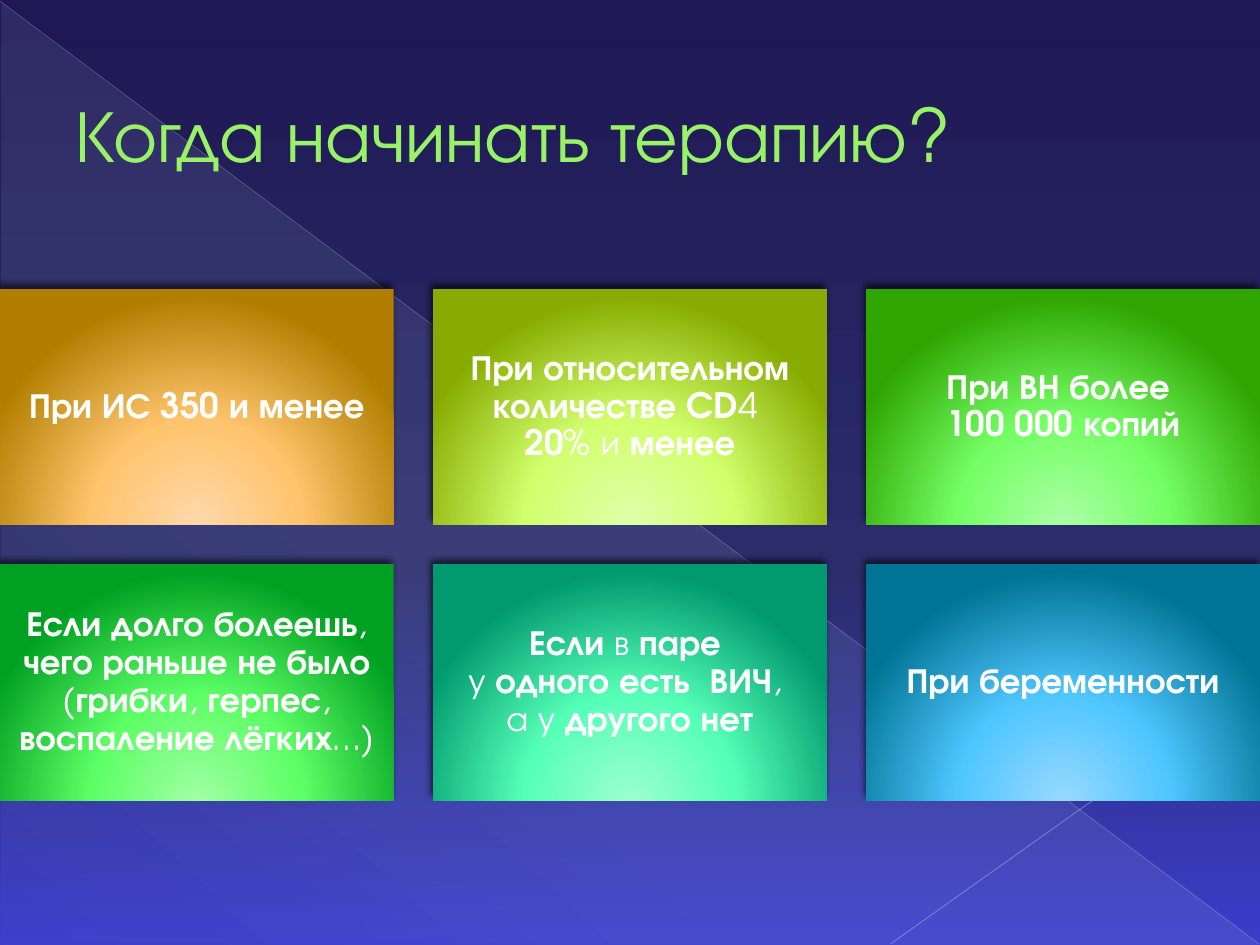
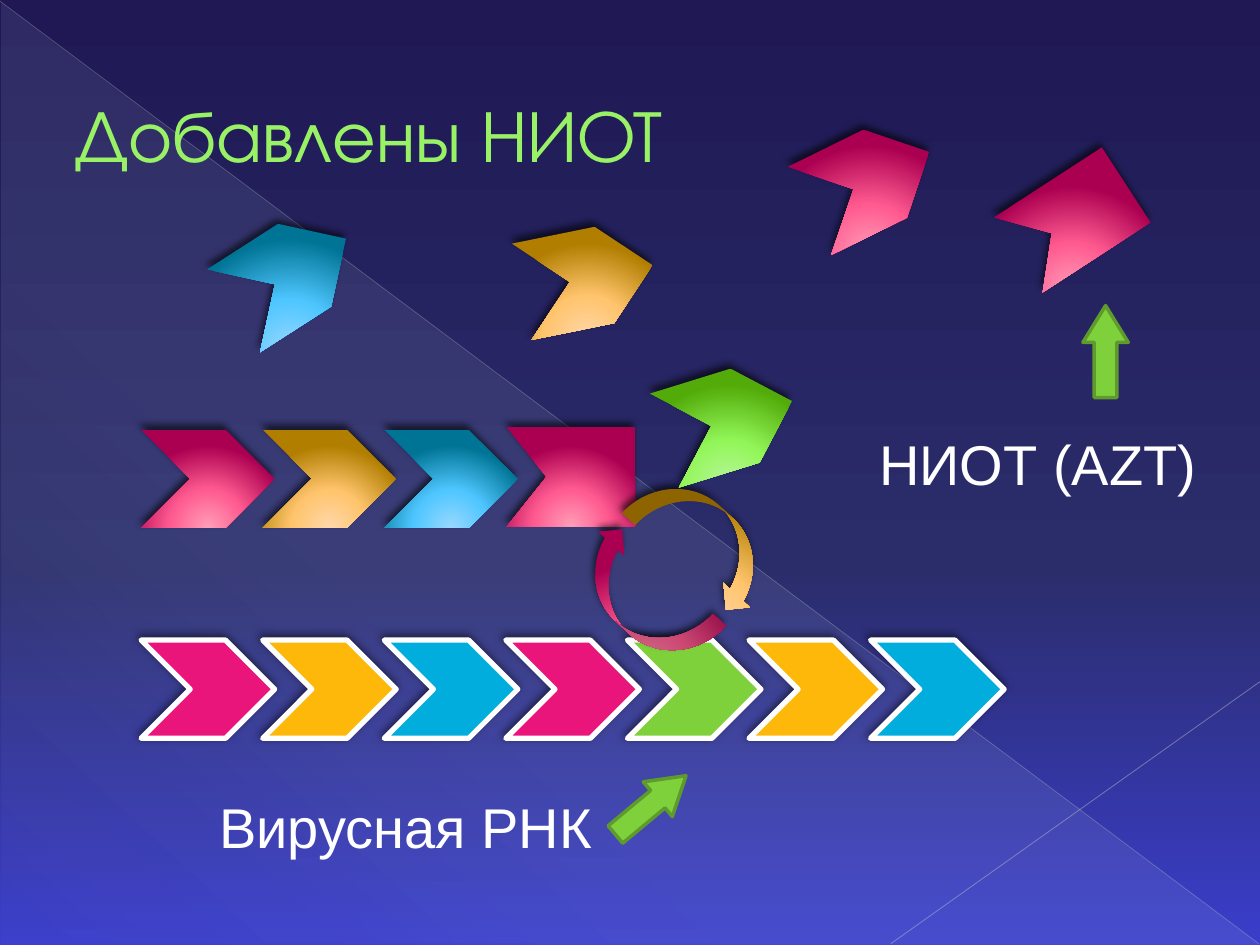
from dataclasses import dataclass
from typing import NamedTuple

from lxml.etree import SubElement
from pptx import Presentation
from pptx.dml.color import RGBColor
from pptx.enum.shapes import MSO_CONNECTOR, MSO_SHAPE
from pptx.enum.text import MSO_ANCHOR as Anchor, MSO_AUTO_SIZE as AutoSize, PP_ALIGN as Align
from pptx.oxml.ns import qn
from pptx.util import Inches, Pt


class Box(NamedTuple):
    left: float
    top: float
    width: float
    height: float

    def inches(self):
        return [Inches(length) for length in self]


@dataclass(frozen=True)
class Theme:
    display: str = "TeX Gyre Adventor"
    body: str = "Arial"
    title_size: int = 42
    label_size: int = 32
    card_size: int = 20
    title: str = "99F166"
    title_edge: str = "589129"
    text: str = "FFFFFF"
    pointer: str = "7FD13B"
    pointer_edge: str = "5E9B2C"
    night: tuple = ((0, "1F1854"), (60, "2B2D6B"), (100, "3A3DCA"))
    veil: tuple = ((0, "D6ECFF", 10), (70, "D6ECFF", 8), (100, "D6ECFF", 1))
    glow_shadow: tuple = (60, 4, 3)
    flat_shadow: tuple = (50, 5, 2)


THEME = Theme()
SLIDE = Box(0, 0, 10, 7.5)
BLOCK = (1.06, 0.78)
PITCH = 0.965

GLOWS = {
    "amber": ("FFD8AB", "FFC46C", "B17E00"),
    "lime": ("E0FFAB", "D1FF6C", "87AB00"),
    "green": ("ACFFA6", "74FF65", "2FA500"),
    "emerald": ("A1FFA4", "5DFF66", "00A022"),
    "mint": ("9CFFCF", "56FFB7", "009A6E"),
    "azure": ("98D8FE", "4FC6FF", "007494"),
    "rose": ("FF9FB8", "FF5B90", "AB0051"),
    "leaf": ("BAF59F", "92F658", "52AB09"),
}
FLATS = {"rose": "EA157A", "amber": "FEB80A", "azure": "00ADDC", "leaf": "7FD13B"}

REASONS = [
    ("amber", "При ИС 350 и менее"),
    ("lime", "При относительном количестве CD|4 \n|20|% и |менее"),
    ("green", "При ВН более \n100 000 копий"),
    ("emerald", "Если долго болеешь|, |чего раньше не было| (|грибки|, |герпес|, |воспаление лёгких|…)"),
    ("mint", "Если| в |паре \n|у |одного есть  ВИЧ|, \nа у |другого нет"),
    ("azure", "При беременности"),
]

VIRAL_RNA = ["rose", "amber", "azure", "rose", "leaf", "amber", "azure"]
COPIED_CHAIN = ["rose", "amber", "azure"]
FREE_BLOCKS = [
    ("azure", 1.77, 1.79, 327.3),
    ("leaf", 5.25, 2.95, 342.8),
    ("amber", 4.13, 1.82, 348.5),
    ("rose", 6.37, 1.05, 333.8),
]
CYCLE_ARROWS = [("rose", 0, 0.45, 42.9), ("amber", 0.49, 0, 222.9)]


def add_color(parent, color, alpha=100):
    node = SubElement(parent, qn("a:srgbClr"), val=color)
    if alpha < 100:
        SubElement(node, qn("a:alpha"), val=str(alpha * 1000))


def set_gradient(fill, element, stops, angle=None):
    fill.gradient()
    gradient = element.find(".//" + qn("a:gradFill"))
    for child in list(gradient):
        gradient.remove(child)
    gradient.set("rotWithShape", "1")
    stop_list = SubElement(gradient, qn("a:gsLst"))
    for position, *color in stops:
        add_color(SubElement(stop_list, qn("a:gs"), pos=str(position * 1000)), *color)
    if angle is None:
        circle = SubElement(gradient, qn("a:path"), path="circle")
        SubElement(circle, qn("a:fillToRect"), l="50000", t="155000", r="50000", b="-55000")
    else:
        SubElement(gradient, qn("a:lin"), ang=str(angle * 60000), scaled="0")


def add_shadow(shape, alpha, blur, distance):
    effects = shape.element.spPr.find(qn("a:effectLst"))
    shadow = SubElement(effects, qn("a:outerShdw"), blurRad=str(Pt(blur)), dist=str(Pt(distance)),
                        dir=str(245 * 60000), algn="tl", rotWithShape="0")
    add_color(shadow, "000000", alpha)


def add_plain(page, kind, box, rotation=0):
    shape = page.shapes.add_shape(kind, *box.inches())
    shape.rotation = rotation
    shape.shadow.inherit = False
    shape.line.fill.background()
    return shape


def make_glow(shape, glow):
    set_gradient(shape.fill, shape.element, zip((0, 46, 100), GLOWS[glow]))
    add_shadow(shape, *THEME.glow_shadow)


def make_flat(shape, color, edge, width):
    shape.fill.solid()
    shape.fill.fore_color.rgb = RGBColor.from_string(color)
    shape.line.color.rgb = RGBColor.from_string(edge)
    shape.line.width = Pt(width)


def format_span(span, face, size, color, bold=False):
    span.font.name = face
    span.font.size = Pt(size)
    span.font.bold = bold
    span.font.color.rgb = RGBColor.from_string(color)


def add_hairline(page, start, end, color, width, alpha):
    line = page.shapes.add_connector(MSO_CONNECTOR.STRAIGHT,
                                     *(Inches(length) for length in start + end))
    line.line.color.rgb = RGBColor.from_string(color)
    line.line.width = Pt(width)
    SubElement(line.element.find(".//" + qn("a:srgbClr")), qn("a:alpha"), val=str(alpha * 1000))
    SubElement(line.element.spPr, qn("a:effectLst"))
    return line


def build_master(deck, page):
    master = deck.slide_master
    set_gradient(master.background.fill, master.element, THEME.night, 90)
    veil = add_plain(page, MSO_SHAPE.RIGHT_TRIANGLE, Box(0.01, 0.02, 9.99, 7.48))
    set_gradient(veil.fill, veil.element, THEME.veil, 133)
    falling = add_hairline(page, (0, 0.01), (9.99, 7.49), "B7BCC5", 0.39, 35)
    rising = add_hairline(page, (10, 5.41), (7.07, 7.49), "BFC3CB", 0.47, 45)
    tree = master.element.find(".//" + qn("p:spTree"))
    for number, part in enumerate((veil, falling, rising), 101):
        part.element.find(".//" + qn("p:cNvPr")).set("id", str(number))
        tree.append(part.element)


def place_title(page, words, box):
    title = page.shapes.title
    title.left, title.top, title.width, title.height = box.inches()
    frame = title.text_frame
    frame.text = words
    frame.vertical_anchor = Anchor.MIDDLE
    frame.auto_size = AutoSize.NONE
    para = frame.paragraphs[0]
    para.alignment = Align.LEFT
    indent = Inches(0.53)
    properties = title.element.find(".//" + qn("a:pPr"))
    properties.set("marL", str(indent))
    properties.set("indent", str(-indent))
    format_span(para.runs[0], THEME.display, THEME.title_size, THEME.title)
    run_properties = title.element.find(".//" + qn("a:rPr"))
    edge = SubElement(run_properties, qn("a:ln"), w=str(Pt(0.5)))
    add_color(SubElement(edge, qn("a:solidFill")), THEME.title_edge)
    run_properties.insert(0, edge)


def write_card(frame, words):
    frame.word_wrap = True
    frame.vertical_anchor = Anchor.MIDDLE
    frame.margin_left = frame.margin_right = frame.margin_top = frame.margin_bottom = Inches(0.08)
    para = frame.paragraphs[0]
    para.alignment = Align.CENTER
    para.line_spacing = 0.9
    for order, piece in enumerate(words.split("|")):
        for row, line in enumerate(piece.split("\n")):
            if row:
                para.add_line_break()
            if line:
                span = para.add_run()
                span.text = line
                format_span(span, THEME.display, THEME.card_size, THEME.text, order % 2 == 0)


def place_cards(page, box):
    gap = box.width / 32
    width, height = 10 * gap, 6 * gap
    for order, (glow, words) in enumerate(REASONS):
        row, column = divmod(order, 3)
        card = add_plain(page, MSO_SHAPE.RECTANGLE, Box(
            box.left + column * (width + gap), box.top + row * (height + gap), width, height))
        make_glow(card, glow)
        write_card(card.text_frame, words)


def add_notched_block(page, box, rotation=0):
    left, top, width, height = box.inches()
    corners = [(1, 0), (1, 1), (0, 1), (0.31, 0.5)]
    builder = page.shapes.build_freeform(left, top)
    builder.add_line_segments([(left + int(x * width), top + int(y * height)) for x, y in corners])
    block = builder.convert_to_shape()
    block.rotation = rotation
    block.shadow.inherit = False
    block.line.fill.background()
    make_glow(block, "rose")


def place_chain(page, box, colors, glowing):
    for order, color in enumerate(colors):
        link = add_plain(page, MSO_SHAPE.CHEVRON,
                         Box(box.left + order * PITCH, box.top, *BLOCK))
        if glowing:
            make_glow(link, color)
        else:
            make_flat(link, FLATS[color], THEME.text, 3)
            add_shadow(link, *THEME.flat_shadow)


def place_cycle(page, box):
    for glow, across, down, rotation in CYCLE_ARROWS:
        arrow = add_plain(page, MSO_SHAPE.CURVED_UP_ARROW,
                          Box(box.left + across, box.top + down, 1.27, 0.57), rotation)
        arrow.element.find(".//" + qn("a:xfrm")).set("flipH", "1")
        make_glow(arrow, glow)


def place_label(page, words, box):
    frame = page.shapes.add_textbox(*box.inches()).text_frame
    frame.word_wrap = True
    frame.text = words
    format_span(frame.paragraphs[0].runs[0], THEME.body, THEME.label_size, THEME.text)


def place_pointer(page, box, rotation):
    arrow = add_plain(page, MSO_SHAPE.RIGHT_ARROW, box, rotation)
    arrow.adjustments[0], arrow.adjustments[1] = 0.5, 0.81
    make_flat(arrow, THEME.pointer, THEME.pointer_edge, 2)


def build_reasons(page, box):
    place_title(page, "Когда начинать терапию?", Box(0.5, 0.29, 9, 1.53))
    place_cards(page, Box(box.left, box.top + 2.29, box.width, 4.07))


def build_inhibitors(page, box):
    add_notched_block(page, Box(4.02, 3.39, 1.02, 0.79))
    place_title(page, "Добавлены НИОТ", Box(0.5, 0.29, 9, 1.53))
    chain_left = box.left + 1.12
    place_chain(page, Box(chain_left, 3.41, 3 * PITCH, BLOCK[1]), COPIED_CHAIN, True)
    place_chain(page, Box(chain_left, 5.08, 7 * PITCH, BLOCK[1]), VIRAL_RNA, False)
    place_label(page, "Вирусная РНК", Box(1.64, 6.24, 3.36, 0.64))
    place_pointer(page, Box(4.8, 6.21, 0.73, 0.36), 320.2)
    place_cycle(page, Box(4.47, 4.01, 1.76, 1.02))
    for glow, left, top, rotation in FREE_BLOCKS:
        make_glow(add_plain(page, MSO_SHAPE.CHEVRON, Box(left, top, *BLOCK), rotation), glow)
    add_notched_block(page, Box(8, 1.39, 1.02, 0.71), 327)
    place_label(page, "НИОТ (AZT)", Box(6.88, 3.36, 2.81, 0.64))
    place_pointer(page, Box(8.41, 2.61, 0.73, 0.36), 270)


def main():
    deck = Presentation()
    deck.slide_width, deck.slide_height = Inches(SLIDE.width), Inches(SLIDE.height)
    title_only = deck.slide_layouts[5]
    pages = [deck.slides.add_slide(title_only) for _ in range(2)]
    build_master(deck, pages[0])
    for page, build in zip(pages, (build_reasons, build_inhibitors)):
        build(page, SLIDE)
    deck.save("out.pptx")


if __name__ == "__main__":
    main()
